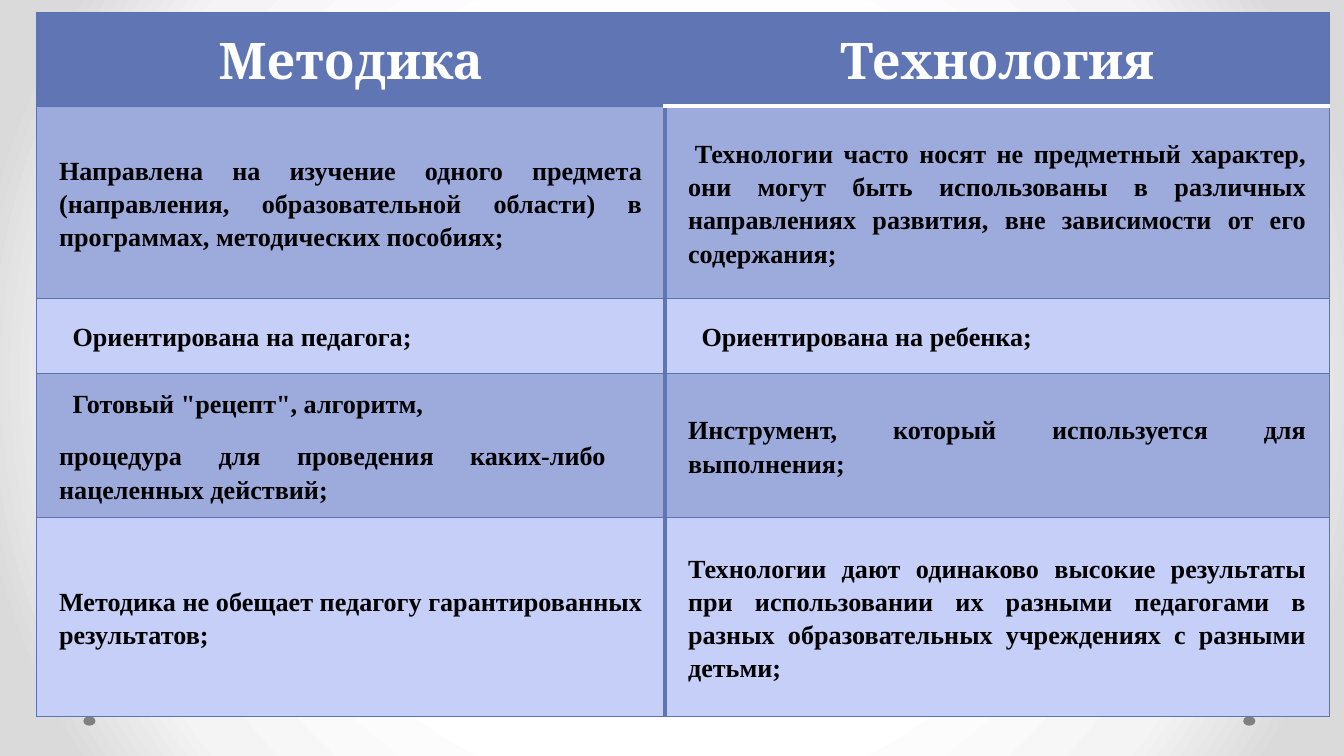
from dataclasses import dataclass

from pptx import Presentation
from pptx.dml.color import RGBColor
from pptx.enum.shapes import MSO_SHAPE
from pptx.enum.text import MSO_ANCHOR, PP_ALIGN
from pptx.oxml import parse_xml
from pptx.oxml.ns import nsdecls
from pptx.util import Inches, Pt


@dataclass(frozen=True)
class Theme:
    header: str = "6076B4"
    dark_band: str = "9DABDC"
    light_band: str = "C5CFF7"
    grid: str = "5C72B2"
    white: str = "FFFFFF"
    ink: str = "000000"
    dot: str = "808080"
    backdrop: tuple = ((50, "FFFFFF"), (76, "F4F4F4"), (92, "DADADA"))
    header_font: str = "Cambria"
    body_font: str = "Times New Roman"
    header_size: float = 27
    body_size: float = 14
    thin: float = 0.75
    thick: float = 2.25


@dataclass(frozen=True)
class Line:
    text: str
    indent: float = 0


@dataclass(frozen=True)
class Comparison:
    height: float
    method: tuple[Line, ...]
    technology: tuple[Line, ...]


THEME = Theme()
COLUMN_WIDTHS = (4.68, 4.94)
COMPARISONS = (
    Comparison(0.7, (Line("Методика"),), (Line("Технология"),)),
    Comparison(
        1.43,
        (Line("Направлена на изучение одного предмета (направления, образовательной "
              "области) в программах, методических пособиях;"),),
        (Line("Технологии часто носят не предметный характер, они могут быть "
              "использованы в различных направлениях развития, вне зависимости "
              "от его содержания;", 0.05),),
    ),
    Comparison(
        0.56,
        (Line("Ориентирована на педагога;", 0.1),),
        (Line("Ориентирована на ребенка;", 0.1),),
    ),
    Comparison(
        1.07,
        # Non-breaking spaces keep these words together when justified
        (Line('Готовый "рецепт", алгоритм,', 0.1),
         Line("процедура для проведения каких-либо  нацеленных действий;")),
        (Line("Инструмент, который используется для выполнения;"),),
    ),
    Comparison(
        1.48,
        (Line("Методика не обещает педагогу гарантированных результатов;"),),
        (Line("Технологии дают одинаково высокие результаты при использовании их "
              "разными педагогами в разных образовательных учреждениях с разными "
              "детьми;"),),
    ),
)


def paint_backdrop(slide) -> None:
    """Fill the slide with a gradient spreading from its centre."""
    stops = "".join(
        f'<a:gs pos="{place * 1000}"><a:srgbClr val="{color}"/></a:gs>'
        for place, color in THEME.backdrop
    )
    slide.background.fill.solid()
    properties = slide.background.fill._xPr
    properties.replace(properties[0], parse_xml(
        f'<a:gradFill {nsdecls("a")} rotWithShape="1"><a:gsLst>{stops}</a:gsLst>'
        '<a:path path="circle"><a:fillToRect l="50000" t="50000" r="50000" b="50000"/>'
        "</a:path></a:gradFill>"
    ))


def add_dot(slide, left: float) -> None:
    dot = slide.shapes.add_shape(
        MSO_SHAPE.OVAL, Inches(left), Inches(5.33), Inches(0.09), Inches(0.07))
    dot.shadow.inherit = False
    dot.fill.solid()
    dot.fill.fore_color.rgb = RGBColor.from_string(THEME.dot)
    dot.line.fill.background()


def set_borders(cell, row: int, column: int) -> None:
    thin = (THEME.grid, THEME.thin)
    divider = (THEME.header, THEME.thick)
    under_header = (THEME.white, THEME.thick) if column == 1 else thin
    borders = {
        "lnL": divider if column == 1 else thin,
        "lnR": divider if column == 0 else thin,
        "lnT": under_header if row == 1 else thin,
        "lnB": under_header if row == 0 else thin,
    }
    properties = cell._tc.get_or_add_tcPr()
    for side, (color, width) in borders.items():
        properties.append(parse_xml(
            f'<a:{side} {nsdecls("a")} w="{Pt(width)}"><a:solidFill>'
            f'<a:srgbClr val="{color}"/></a:solidFill></a:{side}>'
        ))


def write_lines(cell, lines: tuple[Line, ...], is_header: bool) -> None:
    frame = cell.text_frame
    for index, line in enumerate(lines):
        paragraph = frame.add_paragraph() if index else frame.paragraphs[0]
        paragraph.alignment = PP_ALIGN.CENTER if is_header else PP_ALIGN.JUSTIFY
        paragraph.line_spacing = 1.15
        paragraph.space_after = Pt(10)
        if line.indent:
            properties = paragraph._p.get_or_add_pPr()
            properties.set("marL", "0")
            properties.set("indent", str(Inches(line.indent)))
        run = paragraph.add_run()
        run.text = line.text
        run.font.bold = True
        run.font.name = THEME.header_font if is_header else THEME.body_font
        run.font.size = Pt(THEME.header_size if is_header else THEME.body_size)
        run.font.color.rgb = RGBColor.from_string(
            THEME.white if is_header else THEME.ink)


def fill_cell(cell, lines: tuple[Line, ...], row: int, column: int) -> None:
    cell.vertical_anchor = MSO_ANCHOR.MIDDLE
    cell.margin_left = cell.margin_right = Inches(0.17)
    cell.margin_top = cell.margin_bottom = Inches(0.09)
    set_borders(cell, row, column)
    band = THEME.dark_band if row % 2 else THEME.light_band
    cell.fill.solid()
    cell.fill.fore_color.rgb = RGBColor.from_string(THEME.header if row == 0 else band)
    write_lines(cell, lines, is_header=row == 0)


def add_comparison_table(slide) -> None:
    table = slide.shapes.add_table(
        len(COMPARISONS), len(COLUMN_WIDTHS), Inches(0.27), Inches(0.09),
        Inches(sum(COLUMN_WIDTHS)), Inches(sum(c.height for c in COMPARISONS)),
    ).table
    for column, width in zip(table.columns, COLUMN_WIDTHS):
        column.width = Inches(width)
    for row, comparison in enumerate(COMPARISONS):
        table.rows[row].height = Inches(comparison.height)
        for column, lines in enumerate((comparison.method, comparison.technology)):
            fill_cell(table.cell(row, column), lines, row, column)


def main() -> None:
    presentation = Presentation()
    presentation.slide_width = Inches(10)
    presentation.slide_height = Inches(10) * 9 // 16
    slide = presentation.slides.add_slide(presentation.slide_layouts[6])

    # Background and the dots below the table
    paint_backdrop(slide)
    for left in (9.25, 0.62):
        add_dot(slide, left)

    # Comparison of method and technology
    add_comparison_table(slide)
    presentation.save("out.pptx")


if __name__ == "__main__":
    main()
